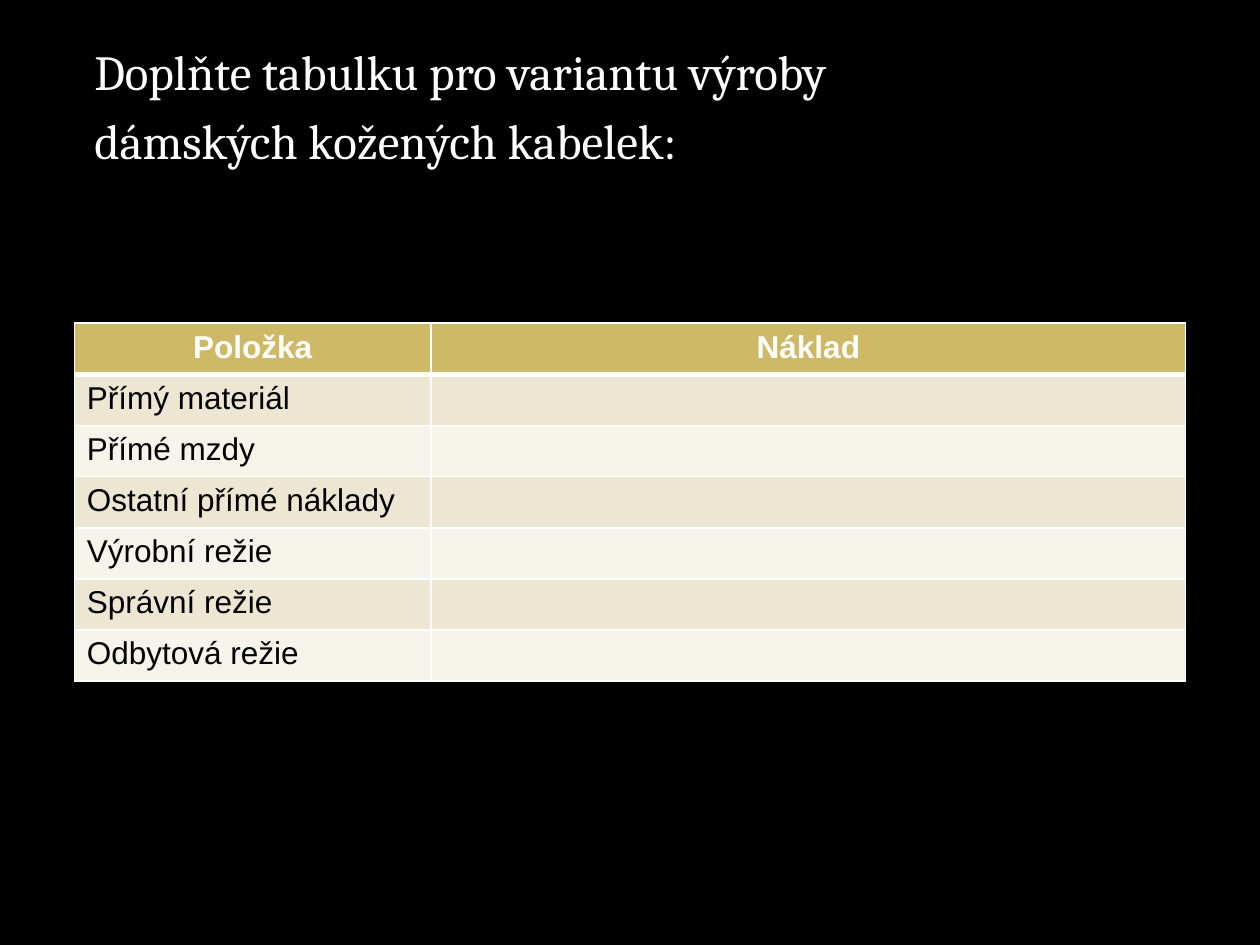
"""Build a slide with a cost table to fill in for handbag production."""
from lxml.etree import SubElement
from pptx import Presentation
from pptx.dml.color import RGBColor as Rgb
from pptx.enum.text import PP_ALIGN as Align
from pptx.oxml.ns import qn
from pptx.util import Emu, Inches, Pt

TASK = ["Doplňte tabulku pro variantu výroby", "dámských kožených kabelek:"]
HEADINGS = ["Položka", "Náklad"]
COST_ITEMS = [
    "Přímý materiál",
    "Přímé mzdy",
    "Ostatní přímé náklady",
    "Výrobní režie",
    "Správní režie",
    "Odbytová režie",
]
THEME = {
    "background": "000000",
    "light": "FFFFFF",
    "dark": "000000",
    "heading": "CEB966",
    "bands": ["EDE6D3", "F6F3EA"],
    "task_font": "Cambria",
    "table_font": "Arial",
    "task_size": 28,
    "table_size": 18,
    "rule": 1,
    "heading_rule": 3,
}
SLIDE_W, SLIDE_H = Inches(10), Inches(7.5)
TASK_AREA = (0.05, 0.037, 0.9, 0.855)
TABLE_AREA = (0.059, 0.342, 0.882, 0.379)
COLUMN_SHARES = [0.321, 0.679]


def place(area):
    return [Emu(round(share * side)) for share, side in zip(area, (SLIDE_W, SLIDE_H) * 2)]


def style(font, family, size, color, bold=False):
    font.name, font.size, font.bold = family, Pt(size), bold
    font.color.rgb = Rgb.from_string(color)


def add_rules(cell, top, bottom):
    sides = {"L": THEME["rule"], "R": THEME["rule"], "T": top, "B": bottom}
    for side, width in sides.items():
        rule = SubElement(cell._tc.get_or_add_tcPr(), qn(f"a:ln{side}"), w=str(Pt(width)))
        SubElement(SubElement(rule, qn("a:solidFill")), qn("a:srgbClr"), val=THEME["light"])


def add_task(slide):
    frame = slide.shapes.add_textbox(*place(TASK_AREA)).text_frame
    frame.word_wrap = True
    for index, line in enumerate(TASK):
        paragraph = frame.add_paragraph() if index else frame.paragraphs[0]
        paragraph.space_before = Pt(6)
        layout = paragraph._p.get_or_add_pPr()
        layout.set("marL", str(Inches(0.6)))
        layout.set("indent", str(Inches(-0.45)))
        run = paragraph.add_run()
        run.text = line
        style(run.font, THEME["task_font"], THEME["task_size"], THEME["light"])


def fill_cell(cell, text, row):
    is_heading = row == 0
    add_rules(
        cell,
        THEME["heading_rule" if row == 1 else "rule"],
        THEME["heading_rule" if is_heading else "rule"],
    )
    cell.fill.solid()
    band = THEME["heading"] if is_heading else THEME["bands"][(row - 1) % 2]
    cell.fill.fore_color.rgb = Rgb.from_string(band)
    paragraph = cell.text_frame.paragraphs[0]
    paragraph.alignment = Align.CENTER if is_heading else Align.LEFT
    color = THEME["light" if is_heading else "dark"]
    if text:
        run = paragraph.add_run()
        run.text = text
        style(run.font, THEME["table_font"], THEME["table_size"], color, is_heading)


def add_costs(slide):
    rows = [HEADINGS] + [[item, ""] for item in COST_ITEMS]
    left, top, width, height = place(TABLE_AREA)
    costs = slide.shapes.add_table(len(rows), len(HEADINGS), left, top, width, height).table
    for column, share in zip(costs.columns, COLUMN_SHARES):
        column.width = Emu(round(width * share))
    for row, texts in enumerate(rows):
        for column, text in enumerate(texts):
            fill_cell(costs.cell(row, column), text, row)


def main():
    deck = Presentation()
    deck.slide_width, deck.slide_height = SLIDE_W, SLIDE_H
    slide = deck.slides.add_slide(deck.slide_layouts[6])
    slide.background.fill.solid()
    slide.background.fill.fore_color.rgb = Rgb.from_string(THEME["background"])
    add_task(slide)
    add_costs(slide)
    deck.save("out.pptx")


if __name__ == "__main__":
    main()
